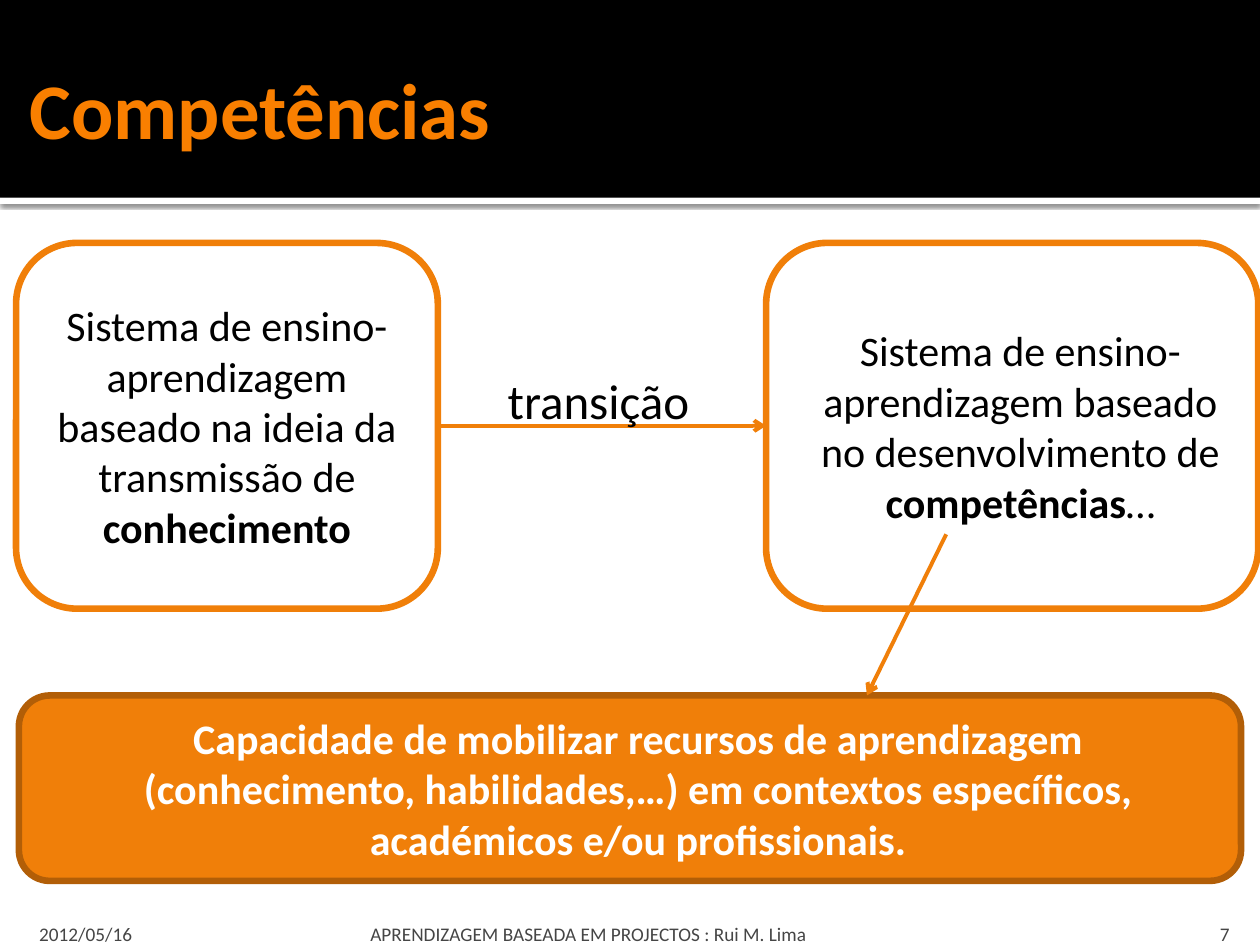
from lxml.etree import SubElement as Sub
from pptx import Presentation
from pptx.dml.color import RGBColor
from pptx.enum.shapes import MSO_CONNECTOR as Conn, MSO_SHAPE as Shape
from pptx.enum.text import MSO_ANCHOR as Anchor, PP_ALIGN as Align
from pptx.oxml.ns import qn
from pptx.util import Pt

BLACK = RGBColor(0, 0, 0)
WHITE = RGBColor(255, 255, 255)
ORANGE = RGBColor(0xF0, 0x7F, 0x09)
BROWN = RGBColor(0xB2, 0x5E, 0x07)
TITLE = RGBColor(0xF9, 0x7F, 0x00)
GREY = RGBColor(0x45, 0x45, 0x45)

BANDS = [((0, 113, 720, 3.6), WHITE), ((0, 0, 720, 113), BLACK)]
FOOT = dict(size=11, color=GREY, anchor=Anchor.BOTTOM)
LABELS = [
    ("Competências", (10, 12.2, 700, 98.6), (7.2, 3.6, 3.6, 3.6),
     dict(size=45, color=TITLE, bold=True, anchor=Anchor.MIDDLE)),
    ("2012/05/16", (13.7, 509.8, 190.8, 30.2), (8.64, 3.6, 3.6, 0), FOOT),
    ("APRENDIZAGEM BASEADA EM PROJECTOS : Rui M. Lima",
     (208, 509.8, 433.4, 30.2), (3.6, 3.6, 3.6, 0), FOOT),
    ("7", (645.8, 509.8, 64, 30.2), (7.2, 3.6, 7.2, 0),
     dict(FOOT, align=Align.RIGHT)),
    ("transição", (283, 208, 121.7, 41), (7.2, 3.6, 7.2, 3.6),
     dict(size=28, color=BLACK, wrap=False)),
]
BOXES = [
    ((9.2, 138.8, 241, 209), WHITE, ORANGE, BLACK, 0, [
        ("Sistema de ensino-aprendizagem baseado na ideia da transmissão de ", False),
        ("conhecimento", True)]),
    ((437.8, 138.8, 281.2, 209), WHITE, ORANGE, BLACK, 9.4, [
        ("Sistema de ensino-aprendizagem baseado no desenvolvimento de ", False),
        ("competências", True), ("…", False)]),
    ((10.8, 397.4, 698.4, 106), ORANGE, BROWN, WHITE, 9.4, [
        ("Capacidade de mobilizar recursos de aprendizagem (conhecimento, "
         "habilidades,…) em contextos específicos, académicos e/ou profissionais.", True)]),
]
POINTER = (540.7, 305.3, 495.4, 397.4)


def pts(vals):
    return [Pt(v) for v in vals]


def add_run(para, text, size, color, bold=False):
    run = para.add_run()
    run.text = text
    for key, val in dict(size=Pt(size), name="Calibri", bold=bold).items():
        setattr(run.font, key, val)
    run.font.color.rgb = color


def add_box(kind, area, fill):
    box = slide.shapes.add_shape(kind, *pts(area))
    box.shadow.inherit = False
    box.fill.solid()
    box.fill.fore_color.rgb = fill
    return box


def add_label(text, area, pads, form):
    frame = slide.shapes.add_textbox(*pts(area)).text_frame
    frame.word_wrap = form.get("wrap", True)
    frame.vertical_anchor = form.get("anchor", Anchor.TOP)
    for side, pad in zip(("left", "top", "right", "bottom"), pads):
        setattr(frame, "margin_" + side, Pt(pad))
    para = frame.paragraphs[0]
    para.alignment = form.get("align", Align.LEFT)
    add_run(para, text, form["size"], form["color"], form.get("bold", False))


def add_node(area, fill, edge, ink, indent, runs):
    box = add_box(Shape.ROUNDED_RECTANGLE, area, fill)
    box.line.color.rgb = edge
    box.line.width = Pt(3.78)
    frame = box.text_frame
    frame.word_wrap = True
    frame.vertical_anchor = Anchor.MIDDLE
    para = frame.paragraphs[0]
    para.alignment = Align.CENTER
    if indent:
        props = para._p.get_or_add_pPr()
        props.set("marL", str(Pt(indent)))
        props.set("indent", "0")
    for text, bold in runs:
        add_run(para, text, 24, ink, bold)
    return box


def add_arrow(ends):
    arrow = slide.shapes.add_connector(Conn.STRAIGHT, *pts(ends))
    arrow.line.color.rgb = ORANGE
    arrow.line.width = Pt(2.25)
    Sub(arrow.line._get_or_add_ln(), qn("a:tailEnd"), type="arrow")
    Sub(arrow._element.spPr, qn("a:effectLst"))
    return arrow


def add_shade(box):
    effects = box._element.spPr.find(qn("a:effectLst"))
    shade = Sub(effects, qn("a:outerShdw"), blurRad=str(Pt(2.5)),
                dist=str(Pt(0.8)), dir="5400000", algn="t", rotWithShape="0")
    tint = Sub(shade, qn("a:srgbClr"), val=str(BLACK))
    Sub(tint, qn("a:alpha"), val="60000")


deck = Presentation()
deck.slide_width, deck.slide_height = Pt(720), Pt(540)
slide = deck.slides.add_slide(deck.slide_layouts[6])

strip, head = [add_box(Shape.RECTANGLE, area, fill) for area, fill in BANDS]
for band in (strip, head):
    band.line.fill.background()
add_shade(strip)

link = add_arrow((250.2, 243.3, 437.8, 243.3))
old, new, goal = [add_node(*item) for item in BOXES]
link.begin_connect(old, 3)
link.end_connect(new, 1)
for item in LABELS:
    add_label(*item)
add_arrow(POINTER)

deck.save("out.pptx")
